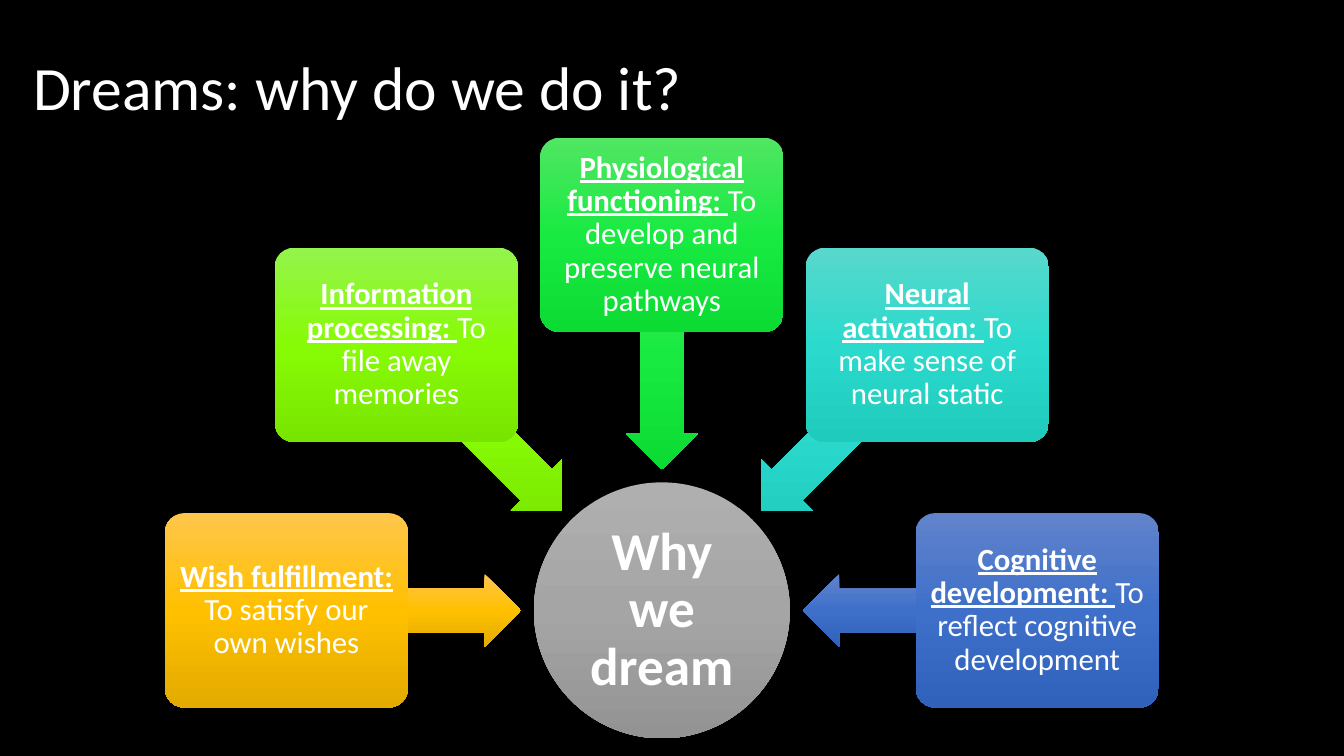
import math

from pptx import Presentation
from pptx import util as u
from pptx.dml.color import RGBColor
from pptx.enum import shapes, text
from pptx.oxml import parse_xml
from pptx.oxml.ns import nsdecls

BLACK = RGBColor(0x00, 0x00, 0x00)
WHITE = RGBColor(0xFF, 0xFF, 0xFF)


def shades(*codes):
    return [RGBColor.from_string(code) for code in codes]


# Light, middle and dark shade of each gradient
GREY = shades("AFAFAF", "A5A5A5", "939393")
GOLD = shades("FFC64B", "FFC000", "E3AB00")
LIME = shades("94F44C", "87FB06", "78E500")
GREEN = shades("51E663", "19EA42", "0CDB34")
TEAL = shades("58D8CC", "2BDACC", "1ECBBD")
BLUE = shades("6183CB", "3E70CA", "3062BB")

FONT = "Calibri"
HUB_SIZE = 6.45
REASON_WIDTH, REASON_HEIGHT = 6.13, 4.9
ARROW_LENGTH, ARROW_WIDTH = 5.9, 1.83
REASON_ORBIT, ARROW_ORBIT = 9.46, 6.5

# Reasons run clockwise from the left of the hub
REASONS = [
    ("Wish fulfillment: ", "To satisfy our own wishes", GOLD),
    ("Information processing: ", "To file away memories", LIME),
    ("Physiological functioning: ",
     "To develop and preserve neural pathways", GREEN),
    ("Neural activation: ", "To make sense of neural static", TEAL),
    ("Cognitive development: ", "To reflect cognitive development", BLUE),
]


def format_run(run, size, bold=False, underline=False):
    run.font.name = FONT
    run.font.size = u.Pt(size)
    run.font.color.rgb = WHITE
    run.font.bold = bold
    run.font.underline = underline


def add_gradient_shape(slide, kind, center, width, height, colors):
    """Place a borderless shape, shaded from top to bottom, around a centre."""
    x, y = center
    shape = slide.shapes.add_shape(
        kind, u.Cm(x - width / 2), u.Cm(y - height / 2),
        u.Cm(width), u.Cm(height))
    stops = "".join(
        f'<a:gs pos="{i * 50000}"><a:srgbClr val="{color}"/></a:gs>'
        for i, color in enumerate(colors))
    # The shading stays upright when the shape is rotated
    shape._element.spPr.append(parse_xml(
        f'<a:gradFill {nsdecls("a")} rotWithShape="0">'
        f'<a:gsLst>{stops}</a:gsLst><a:lin ang="5400000" scaled="0"/>'
        '</a:gradFill>'))
    shape.line.fill.background()
    shape.shadow.inherit = False
    return shape


def center_text(shape, inset):
    frame = shape.text_frame
    frame.word_wrap = True
    frame.vertical_anchor = text.MSO_ANCHOR.MIDDLE
    frame.margin_left = frame.margin_right = u.Cm(inset)
    frame.margin_top = frame.margin_bottom = u.Cm(inset)
    paragraph = frame.paragraphs[0]
    paragraph.alignment = text.PP_ALIGN.CENTER
    paragraph.line_spacing = 0.9
    return paragraph


def add_title(slide, left, top, width, height):
    title = slide.shapes.title
    title.left, title.top = u.Cm(left), u.Cm(top)
    title.width, title.height = u.Cm(width), u.Cm(height)
    frame = title.text_frame
    frame.text = "Dreams: why do we do it?"
    frame.auto_size = text.MSO_AUTO_SIZE.NONE
    frame.vertical_anchor = text.MSO_ANCHOR.MIDDLE
    paragraph = frame.paragraphs[0]
    paragraph.alignment = text.PP_ALIGN.LEFT
    paragraph.line_spacing = 0.9
    format_run(paragraph.runs[0], 44)


def add_hub(slide, center):
    hub = add_gradient_shape(
        slide, shapes.MSO_SHAPE.OVAL, center, HUB_SIZE, HUB_SIZE, GREY)
    paragraph = center_text(hub, 0.07)
    paragraph.text = "Why we dream"
    format_run(paragraph.runs[0], 38, bold=True)


def add_reason(slide, hub_center, angle, heading, purpose, colors):
    """Place a reason and its arrow on the ray at this angle from the hub."""
    def on_ray(distance):
        turn = math.radians(angle)
        return (hub_center[0] + distance * math.cos(turn),
                hub_center[1] + distance * math.sin(turn))

    # Arrow towards the hub
    arrow = add_gradient_shape(
        slide, shapes.MSO_SHAPE.LEFT_ARROW, on_ray(ARROW_ORBIT),
        ARROW_LENGTH, ARROW_WIDTH, colors)
    arrow.adjustments[0] = 0.6
    arrow.adjustments[1] = 0.5
    arrow.rotation = angle % 360

    # Reason card
    reason = add_gradient_shape(
        slide, shapes.MSO_SHAPE.ROUNDED_RECTANGLE, on_ray(REASON_ORBIT),
        REASON_WIDTH, REASON_HEIGHT, colors)
    reason.adjustments[0] = 0.1
    paragraph = center_text(reason, 0.12)
    for words, is_heading in ((heading, True), (purpose, False)):
        run = paragraph.add_run()
        run.text = words
        format_run(run, 22, bold=is_heading, underline=is_heading)


def add_radial_diagram(slide, center):
    add_hub(slide, center)
    step = 180 / (len(REASONS) - 1)
    for i, reason in enumerate(REASONS):
        add_reason(slide, center, 180 + i * step, *reason)


def main():
    deck = Presentation()
    deck.slide_width, deck.slide_height = u.Cm(33.87), u.Cm(19.05)
    slide = deck.slides.add_slide(deck.slide_layouts.get_by_name("Title Only"))
    slide.background.fill.solid()
    slide.background.fill.fore_color.rgb = BLACK
    add_title(slide, 0.58, 0.43, 29.21, 3.68)
    add_radial_diagram(slide, (16.68, 15.38))
    deck.save("out.pptx")


if __name__ == "__main__":
    main()
